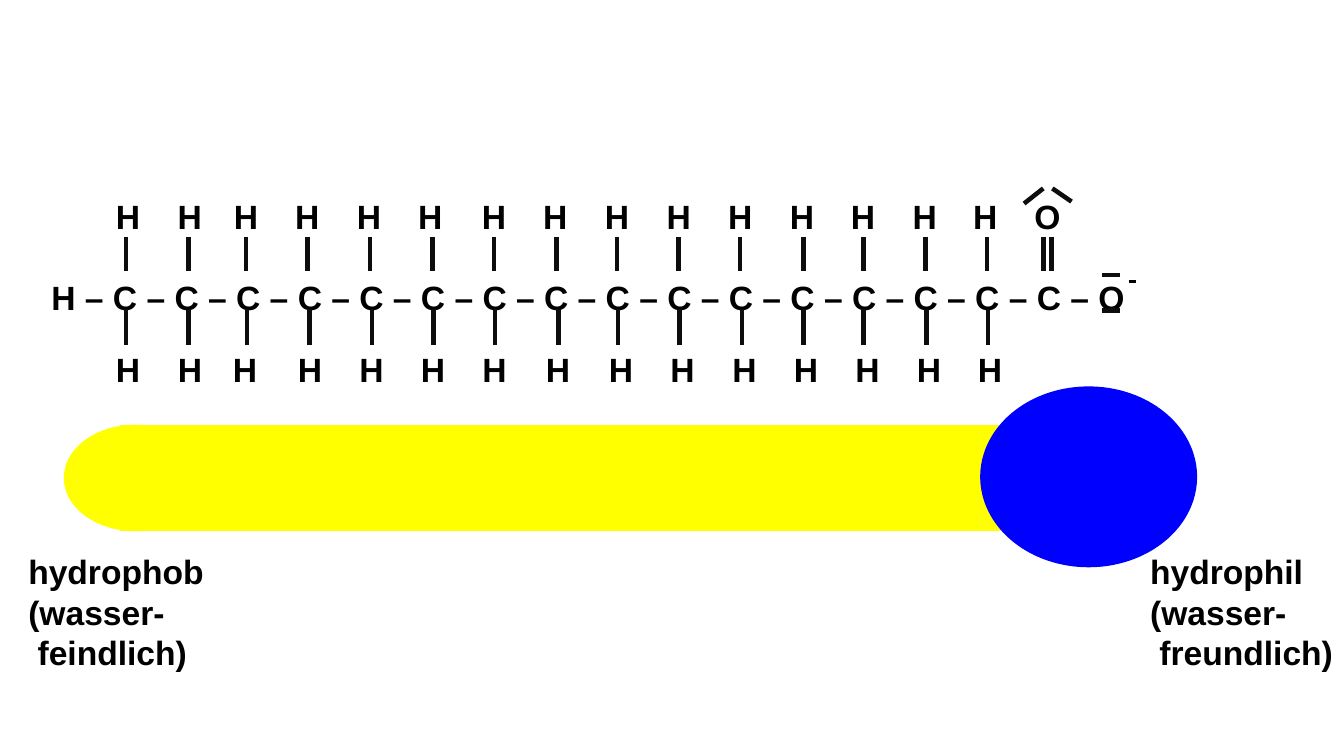
from pptx import Presentation
from pptx import util as u
from pptx.dml.color import RGBColor
from pptx.enum import shapes, text
from pptx.oxml import parse_xml
from pptx.oxml.ns import nsdecls

BLACK = RGBColor(0x00, 0x00, 0x00)
BOND = RGBColor(0x0D, 0x0D, 0x0D)
YELLOW = RGBColor(0xFF, 0xFF, 0x00)
BLUE = RGBColor(0x00, 0x00, 0xFF)
FONT_SIZE = 24
LINE_HEIGHT = 29
ATOM_WIDTH = 20

# Horizontal centres, measured from the left edge of the molecule
UPPER_ATOMS = (55.4, 99.5, 139.7, 183.4, 227.5, 271.3, 316.8, 360.6,
               404.7, 448.9, 492.7, 536.8, 580.5, 624.6, 667.7)
LOWER_ATOMS = (55.4, 99.7, 139, 185.4, 229.4, 273.3, 317.2, 362.6,
               407.6, 451.5, 495.8, 539.7, 583.6, 627.6, 671.1)
UPPER_BONDS = (54, 98.6, 139.7, 183.6, 228.2, 272.9, 316.8, 361.4,
               404.6, 448.6, 492.5, 537.8, 581, 625, 668.9)
LOWER_BONDS = (54, 98.6, 140.4, 185, 229.7, 273.6, 317.5, 362.9,
               405.4, 449.3, 493.9, 537.8, 581, 625.7, 669.6)
OXYGEN = 712.2
DOUBLE_BOND = (709.2, 715)
LONE_PAIRS = ((715.7, 4.6, 729.4, 14), (695.5, 15.4, 709.2, 4.6),
              (751.5, 66.6, 764, 66.6), (751, 91.8, 764, 91.8))
CHARGE = (770.4, 70.9, 775.4, 70.9)


def add_words(page, left, top, width, lines, align=text.PP_ALIGN.LEFT):
    box = page.shapes.add_textbox(
        u.Pt(left), u.Pt(top), u.Pt(width), u.Pt(LINE_HEIGHT * len(lines)))
    frame = box.text_frame
    frame.word_wrap = False
    frame.margin_left = frame.margin_right = 0
    frame.margin_top = frame.margin_bottom = 0
    frame.text = "\n".join(lines)
    for para in frame.paragraphs:
        para.alignment = align
        if len(lines) > 1:
            para.line_spacing = u.Pt(LINE_HEIGHT)
        para.font.name = "Arial"
        para.font.size = u.Pt(FONT_SIZE)
        para.font.bold = True
        para.font.color.rgb = BLACK


def add_atom(page, centre, top, symbol):
    add_words(page, centre - ATOM_WIDTH / 2, top, ATOM_WIDTH, [symbol],
              text.PP_ALIGN.CENTER)


def add_line(page, left, top, ends, color=BOND, width=3.25):
    """Draw a line whose ends are measured from left and top."""
    x1, y1, x2, y2 = ends
    line = page.shapes.add_connector(
        shapes.MSO_CONNECTOR.STRAIGHT, u.Pt(left + x1), u.Pt(top + y1),
        u.Pt(left + x2), u.Pt(top + y2))
    line.line.color.rgb = color
    line.line.width = u.Pt(width)
    line._element.spPr.append(parse_xml(f"<a:effectLst {nsdecls('a')}/>"))


def add_solid(page, kind, left, top, width, height, color):
    solid = page.shapes.add_shape(
        kind, u.Pt(left), u.Pt(top), u.Pt(width), u.Pt(height))
    solid.shadow.inherit = False
    solid.fill.solid()
    solid.fill.fore_color.rgb = color
    solid.line.color.rgb = color
    solid.line.width = u.Pt(1)


def draw_molecule(page, left, top):
    """Draw the structural formula of the fatty acid anion."""
    chain = " – ".join(["H"] + ["C"] * 16 + ["O"])
    add_words(page, left + 0.7, top + 67.6, 790, [chain])

    rows = ((UPPER_ATOMS, 9.7, UPPER_BONDS + DOUBLE_BOND, 39.2, 63.7),
            (LOWER_ATOMS, 119, LOWER_BONDS, 91, 116.2))
    for atoms, atom_top, bonds, start, end in rows:
        for centre in atoms:
            add_atom(page, left + centre, top + atom_top, "H")
        for x in bonds:
            add_line(page, left, top, (x, start, x, end))

    add_atom(page, left + OXYGEN, top + 9.7, "O")
    for ends in LONE_PAIRS:
        add_line(page, left, top, ends)
    add_line(page, left, top, CHARGE, BLACK, 2.5)


def draw_surfactant(page, left, top):
    """Draw the yellow hydrophobic tail and the blue hydrophilic head."""
    oval = shapes.MSO_SHAPE.OVAL
    tail_top = top + 27.4
    add_solid(page, oval, left, tail_top, 100.8, 75, YELLOW)
    add_solid(page, shapes.MSO_SHAPE.RECTANGLE, left + 40.4, tail_top,
              627.8, 75, YELLOW)
    add_solid(page, oval, left + 654.5, top, 154, 128.2, BLUE)


def draw_labels(page, left, top):
    add_words(page, left, top, 132,
              ["hydrophob", "(wasser-", " feindlich)"])
    add_words(page, left + 801.3, top, 132,
              ["hydrophil", "(wasser-", " freundlich)"])


def main():
    deck = Presentation()
    deck.slide_width, deck.slide_height = u.Pt(960), u.Pt(540)
    page = deck.slides.add_slide(deck.slide_layouts[6])
    draw_surfactant(page, 46.1, 276.5)
    draw_labels(page, 20.2, 393.4)
    draw_molecule(page, 36, 130)
    deck.save("out.pptx")


if __name__ == "__main__":
    main()
